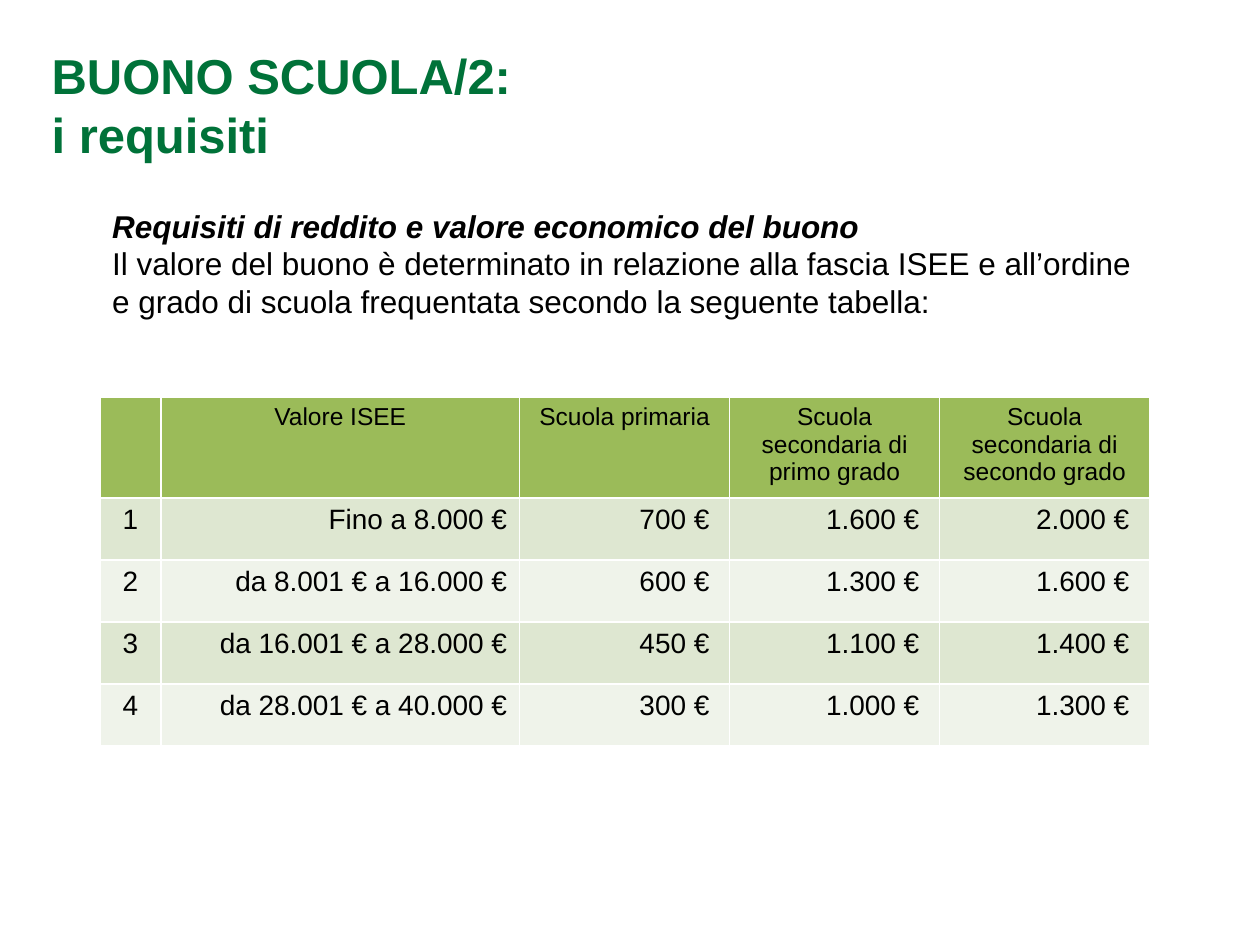
"""Build the slide on the income requirements and amounts of the school voucher."""

import copy
from dataclasses import dataclass

import lxml.etree
import pptx
import pptx.dml.color
import pptx.enum.text
import pptx.oxml.ns
import pptx.util

Pt = pptx.util.Pt
RGBColor = pptx.dml.color.RGBColor
Align = pptx.enum.text.PP_ALIGN
Anchor = pptx.enum.text.MSO_ANCHOR
qn = pptx.oxml.ns.qn

FONT = "Arial"
GREEN = RGBColor(0x00, 0x72, 0x39)
BLACK = RGBColor(0x00, 0x00, 0x00)
WHITE = RGBColor(0xFF, 0xFF, 0xFF)
HEADER_FILL = RGBColor(0x9B, 0xBB, 0x59)
BAND_FILLS = (RGBColor(0xDE, 0xE7, 0xD1), RGBColor(0xEF, 0xF3, 0xEA))

TABLE_LEFT, TABLE_TOP = 57, 227
COLUMN_WIDTHS = (35, 205, 120, 120, 120)
HEADER_HEIGHT, ROW_HEIGHT = 54, 35.4
BORDER_WIDTH = 1


@dataclass(frozen=True)
class IncomeBand:
    income: str
    primary: str
    lower_secondary: str
    upper_secondary: str


HEADERS = (
    "",
    "Valore ISEE",
    "Scuola primaria",
    "Scuola secondaria di primo grado",
    "Scuola secondaria di secondo grado",
)
INCOME_BANDS = (
    IncomeBand("Fino a 8.000 €", "700 € ", "1.600 € ", "2.000 € "),
    IncomeBand("da 8.001 € a 16.000 €", "600 € ", "1.300 € ", "1.600 € "),
    IncomeBand("da 16.001 € a 28.000 €", "450 € ", "1.100 € ", "1.400 € "),
    IncomeBand("da 28.001 € a 40.000 €", "300 € ", "1.000 € ", "1.300 € "),
)


def write_text(paragraph, text: str, *, size: float, color: RGBColor = BLACK,
               bold: bool = False, italic: bool = False, align=Align.LEFT) -> None:
    """Fill a paragraph with text in one format, line breaks included."""
    paragraph.text = text
    paragraph.alignment = align
    for run in paragraph.runs:
        run.font.name = FONT
        run.font.size = Pt(size)
        run.font.bold = bold
        run.font.italic = italic
        run.font.color.rgb = color
        for line_break in paragraph._p.findall(qn("a:br")):
            if line_break.find(qn("a:rPr")) is None:
                line_break.append(copy.deepcopy(run._r.find(qn("a:rPr"))))


def set_borders(cell, color: RGBColor, width: float) -> None:
    """Draw the same line on all four sides of a cell."""
    properties = cell._tc.get_or_add_tcPr()
    for position, side in enumerate(("a:lnL", "a:lnR", "a:lnT", "a:lnB")):
        line = lxml.etree.Element(qn(side), w=str(Pt(width)))
        fill = lxml.etree.SubElement(line, qn("a:solidFill"))
        lxml.etree.SubElement(fill, qn("a:srgbClr"), val=str(color))
        properties.insert(position, line)


def fill_cell(cell, text: str, fill: RGBColor, size: float, align) -> None:
    """Write and colour one table cell."""
    cell.fill.solid()
    cell.fill.fore_color.rgb = fill
    set_borders(cell, WHITE, BORDER_WIDTH)
    write_text(cell.text_frame.paragraphs[0], text, size=size, align=align)


def add_title(slide) -> None:
    """Place and format the title."""
    title = slide.shapes.title
    title.left, title.top, title.width, title.height = Pt(22.3), Pt(21), Pt(663), Pt(77)
    title.text_frame.vertical_anchor = Anchor.MIDDLE
    write_text(title.text_frame.paragraphs[0], "BUONO SCUOLA/2:\vi requisiti",
               size=28, color=GREEN, bold=True)


def add_introduction(slide) -> None:
    """Add the heading and the sentence above the table."""
    box = slide.shapes.add_textbox(Pt(57), Pt(114.5), Pt(605.5), Pt(96.5))
    frame = box.text_frame
    frame.word_wrap = True
    write_text(frame.paragraphs[0], "Requisiti di reddito e valore economico del buono",
               size=18, bold=True, italic=True)
    write_text(frame.add_paragraph(),
               "Il valore del buono è determinato in relazione alla fascia ISEE e "
               "all’ordine e grado di scuola frequentata secondo la seguente tabella:",
               size=18)


def add_voucher_table(slide) -> None:
    """Add the table of voucher amounts by income band and school."""
    height = HEADER_HEIGHT + ROW_HEIGHT * len(INCOME_BANDS)
    table = slide.shapes.add_table(
        len(INCOME_BANDS) + 1, len(HEADERS), Pt(TABLE_LEFT), Pt(TABLE_TOP),
        Pt(sum(COLUMN_WIDTHS)), Pt(height)).table
    for column, width in zip(table.columns, COLUMN_WIDTHS):
        column.width = Pt(width)
    for index, row in enumerate(table.rows):
        row.height = Pt(ROW_HEIGHT if index else HEADER_HEIGHT)

    for column, header in enumerate(HEADERS):
        fill_cell(table.cell(0, column), header, HEADER_FILL, 14, Align.CENTER)
    for number, band in enumerate(INCOME_BANDS, start=1):
        fill = BAND_FILLS[(number - 1) % len(BAND_FILLS)]
        values = (str(number), band.income, band.primary,
                  band.lower_secondary, band.upper_secondary)
        for column, value in enumerate(values):
            align = Align.RIGHT if column else Align.CENTER
            fill_cell(table.cell(number, column), value, fill, 16, align)


def main() -> None:
    """Build and save the presentation."""
    presentation = pptx.Presentation()
    presentation.slide_width, presentation.slide_height = Pt(720), Pt(540)
    slide = presentation.slides.add_slide(presentation.slide_layouts.get_by_name("Title Only"))
    add_title(slide)
    add_introduction(slide)
    add_voucher_table(slide)
    presentation.save("out.pptx")


if __name__ == "__main__":
    main()
